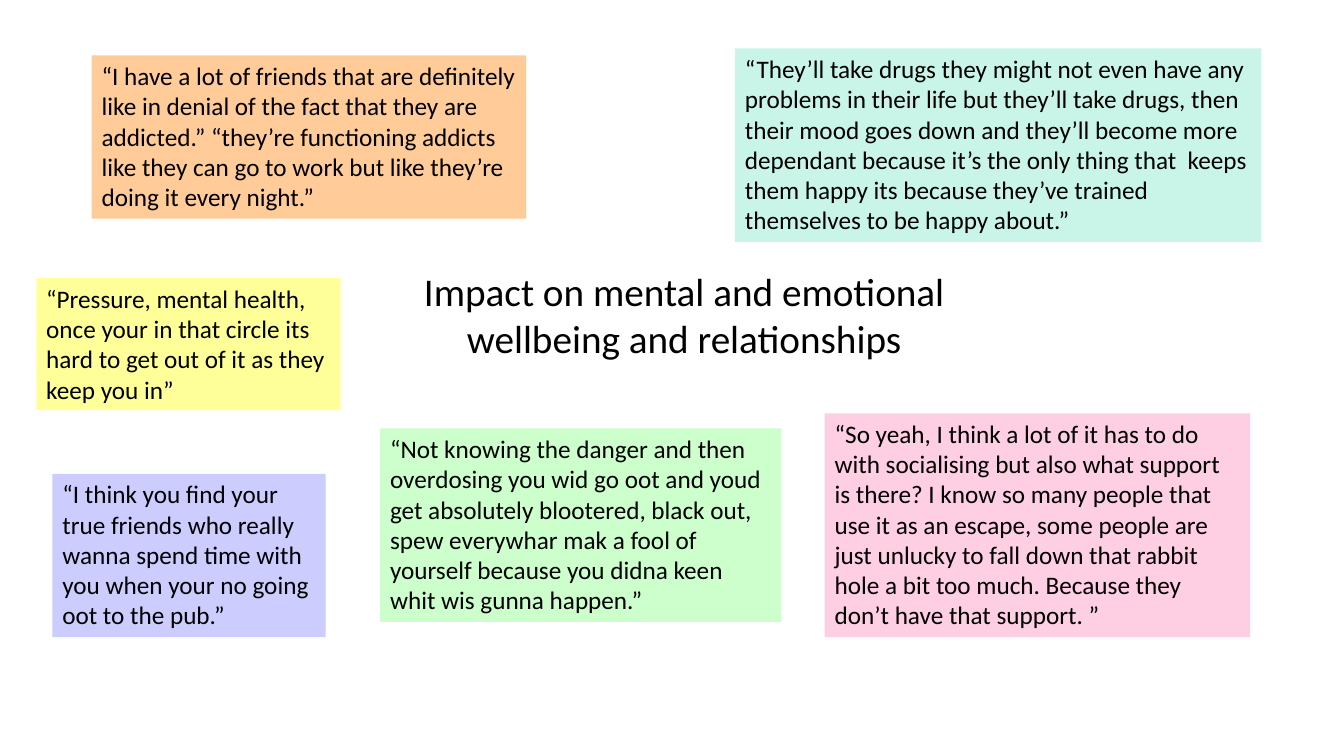
import pptx
import pptx.dml.color
import pptx.enum.text
import pptx.util
from pptx.dml.color import RGBColor
from pptx.util import Inches

BLACK = RGBColor(0x00, 0x00, 0x00)
WHITE = RGBColor(0xFF, 0xFF, 0xFF)
YELLOW = RGBColor(0xFF, 0xFF, 0x99)
MINT = RGBColor(0xC8, 0xF5, 0xE8)
LILAC = RGBColor(0xCC, 0xCC, 0xFF)
GREEN = RGBColor(0xCC, 0xFF, 0xCC)
ORANGE = RGBColor(0xFF, 0xCC, 0x99)
PINK = RGBColor(0xFE, 0xCE, 0xE3)

TITLE = "Impact on mental and emotional wellbeing and relationships"

QUOTES = [
    ("“Pressure, mental health, once your in that circle its hard to get out "
     "of it as they keep you in”",
     (0.36, 2.76, 3.02, 1.31), YELLOW),
    ("“They’ll take drugs they might not even have any problems in their life "
     "but they’ll take drugs, then their mood goes down and they’ll become "
     "more dependant because it’s the only thing that  keeps them happy its "
     "because they’ve trained themselves to be happy about.”",
     (7.29, 0.48, 5.22, 1.92), MINT),
    ("“I think you find your true friends who really wanna spend time with "
     "you when your no going oot to the pub.”",
     (0.52, 4.7, 2.71, 1.62), LILAC),
    ("“Not knowing the danger and then overdosing you wid go oot and youd get "
     "absolutely blootered, black out, spew everywhar mak a fool of yourself "
     "because you didna keen whit wis gunna happen.”",
     (3.77, 4.25, 3.98, 1.92), GREEN),
    ("“I have a lot of friends that are definitely like in denial of the fact "
     "that they are addicted.” “they’re functioning addicts like they can go "
     "to work but like they’re doing it every night.”",
     (0.91, 0.55, 4.31, 1.62), ORANGE),
    ("“So yeah, I think a lot of it has to do with socialising but also what "
     "support is there? I know so many people that use it as an escape, some "
     "people are just unlucky to fall down that rabbit hole a bit too much. "
     "Because they don’t have that support. ”",
     (8.18, 4.1, 4.22, 2.22), PINK),
]


def add_text_box(page, text, *, bounds, fill, size=18,
                 align=pptx.enum.text.PP_ALIGN.LEFT):
    box = page.shapes.add_textbox(*map(Inches, bounds))
    box.fill.solid()
    box.fill.fore_color.rgb = fill
    frame = box.text_frame
    frame.word_wrap = True
    frame.auto_size = pptx.enum.text.MSO_AUTO_SIZE.SHAPE_TO_FIT_TEXT
    para = frame.paragraphs[0]
    para.alignment = align
    span = para.add_run()
    span.text = text
    span.font.name = "Calibri"
    span.font.size = pptx.util.Pt(size)
    span.font.color.rgb = BLACK


def main():
    deck = pptx.Presentation()
    deck.slide_width = Inches(13.33)
    deck.slide_height = Inches(7.5)
    page = deck.slides.add_slide(deck.slide_layouts[6])
    add_text_box(page, TITLE, bounds=(3.37, 2.6, 6.83, 1.04), fill=WHITE,
                 size=28, align=pptx.enum.text.PP_ALIGN.CENTER)
    for quote, bounds, fill in QUOTES:
        add_text_box(page, quote, bounds=bounds, fill=fill)
    deck.save("out.pptx")


if __name__ == "__main__":
    main()
